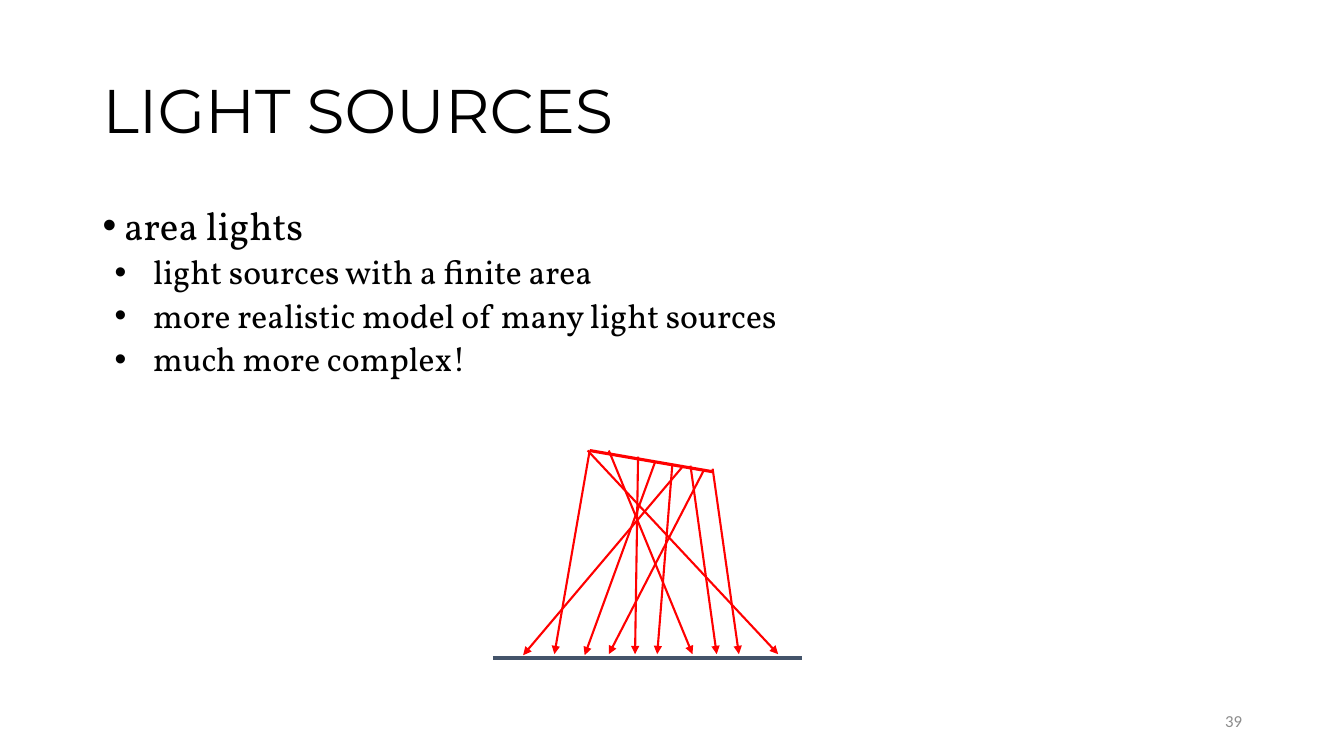
from dataclasses import dataclass

from lxml.etree import SubElement
from pptx import Presentation
from pptx.dml.color import RGBColor
from pptx.enum.shapes import MSO_CONNECTOR as Connector
from pptx.enum.text import MSO_ANCHOR as Anchor, PP_ALIGN as Align
from pptx.oxml.ns import qn
from pptx.slide import Slide
from pptx.text.text import TextFrame, _Paragraph as Paragraph
from pptx.util import Inches, Length, Pt

BLACK = RGBColor(0x00, 0x00, 0x00)
GREY = RGBColor(0x8C, 0x8C, 0x8C)
RED = RGBColor(0xFF, 0x00, 0x00)
SLATE = RGBColor(0x44, 0x54, 0x6A)

CELL = 0.1  # grid cell in inches; all positions are columns and rows
COLUMNS, ROWS = 133.33, 75


@dataclass(frozen=True)
class Style:
    font: str
    size: float
    color: RGBColor = BLACK


@dataclass(frozen=True)
class Bullet:
    text: str
    style: Style
    level: int
    margin: float
    indent: float
    space_before: float


@dataclass(frozen=True)
class Segment:
    start: tuple[float, float]
    end: tuple[float, float]
    color: RGBColor = RED
    width: float = 1.5
    arrow: bool = True


TITLE = Style("Montserrat", 44)
TOPIC = Style("Vollkorn", 28)
DETAIL = Style("Vollkorn", 24)
PAGE_NUMBER = Style("Calibri", 12, GREY)

BULLETS = [Bullet(" area lights", TOPIC, 0, 0, 0, 10)] + [
    Bullet(text, DETAIL, 1, 5, -3.8, 5)
    for text in (
        "light sources with a finite area",
        "more realistic model of many light sources",
        "much more complex!",
    )
]

FLOOR = Segment((48.9, 65.3), (79.6, 65.3), SLATE, 3, arrow=False)
LAMP = Segment((58.5, 44.7), (70.7, 46.8), RED, 2.25, arrow=False)
RAYS = [
    Segment((58.3, 44.7), (77.2, 64.9)),
    Segment((70.7, 46.5), (73.3, 64.9)),
    Segment((67.8, 46.2), (51.9, 65)),
    Segment((63.3, 45.3), (63, 64.9)),
    Segment((60.4, 44.7), (68.7, 64.9)),
    Segment((69.8, 46.7), (60.4, 64.9)),
    Segment((65, 45.8), (58, 65)),
    Segment((58.5, 44.7), (55, 64.9)),
    Segment((68.5, 46.2), (71.1, 64.9)),
    Segment((66.7, 46.1), (65.2, 64.9)),
]


def grid(cells: float) -> Length:
    """Length of a number of grid cells."""
    return Inches(cells * CELL)


def add_text_box(page: Slide, left: float, top: float, width: float,
                 height: float, anchor: Anchor) -> TextFrame:
    box = page.shapes.add_textbox(grid(left), grid(top), grid(width), grid(height))
    frame = box.text_frame
    frame.word_wrap = True
    frame.vertical_anchor = anchor
    return frame


def write(para: Paragraph, text: str, style: Style) -> None:
    para.text = text
    for span in para.runs:
        span.font.name = style.font
        span.font.size = Pt(style.size)
        span.font.color.rgb = style.color


def write_bullet(para: Paragraph, bullet: Bullet) -> None:
    write(para, bullet.text, bullet.style)
    para.level = bullet.level
    para.line_spacing = 0.9
    para.space_before = Pt(bullet.space_before)
    properties = para._p.get_or_add_pPr()
    properties.set("marL", str(grid(bullet.margin)))
    properties.set("indent", str(grid(bullet.indent)))
    SubElement(properties, qn("a:buFont"), typeface="Arial")
    SubElement(properties, qn("a:buChar"), char="•")


def draw_segment(page: Slide, segment: Segment) -> None:
    ends = [grid(cells) for cells in (*segment.start, *segment.end)]
    connector = page.shapes.add_connector(Connector.STRAIGHT, *ends)
    connector.line.color.rgb = segment.color
    connector.line.width = Pt(segment.width)
    if segment.arrow:
        SubElement(connector.line._get_or_add_ln(), qn("a:tailEnd"), type="triangle")
    SubElement(connector._element.spPr, qn("a:effectLst"))


def main() -> None:
    deck = Presentation()
    deck.slide_width, deck.slide_height = grid(COLUMNS), grid(ROWS)
    page = deck.slides.add_slide(deck.slide_layouts[6])

    number = add_text_box(page, 94.2, 69.5, 30, 4, Anchor.MIDDLE).paragraphs[0]
    write(number, "39", PAGE_NUMBER)
    number.alignment = Align.RIGHT

    title = add_text_box(page, 9.2, 4, 115, 14.5, Anchor.MIDDLE).paragraphs[0]
    write(title, "LIGHT SOURCES", TITLE)
    title.line_spacing = 0.9

    body = add_text_box(page, 9.2, 20, 115, 47.6, Anchor.TOP)
    for index, bullet in enumerate(BULLETS):
        write_bullet(body.add_paragraph() if index else body.paragraphs[0], bullet)

    for segment in (FLOOR, LAMP, *RAYS):
        draw_segment(page, segment)

    deck.save("out.pptx")


if __name__ == "__main__":
    main()
